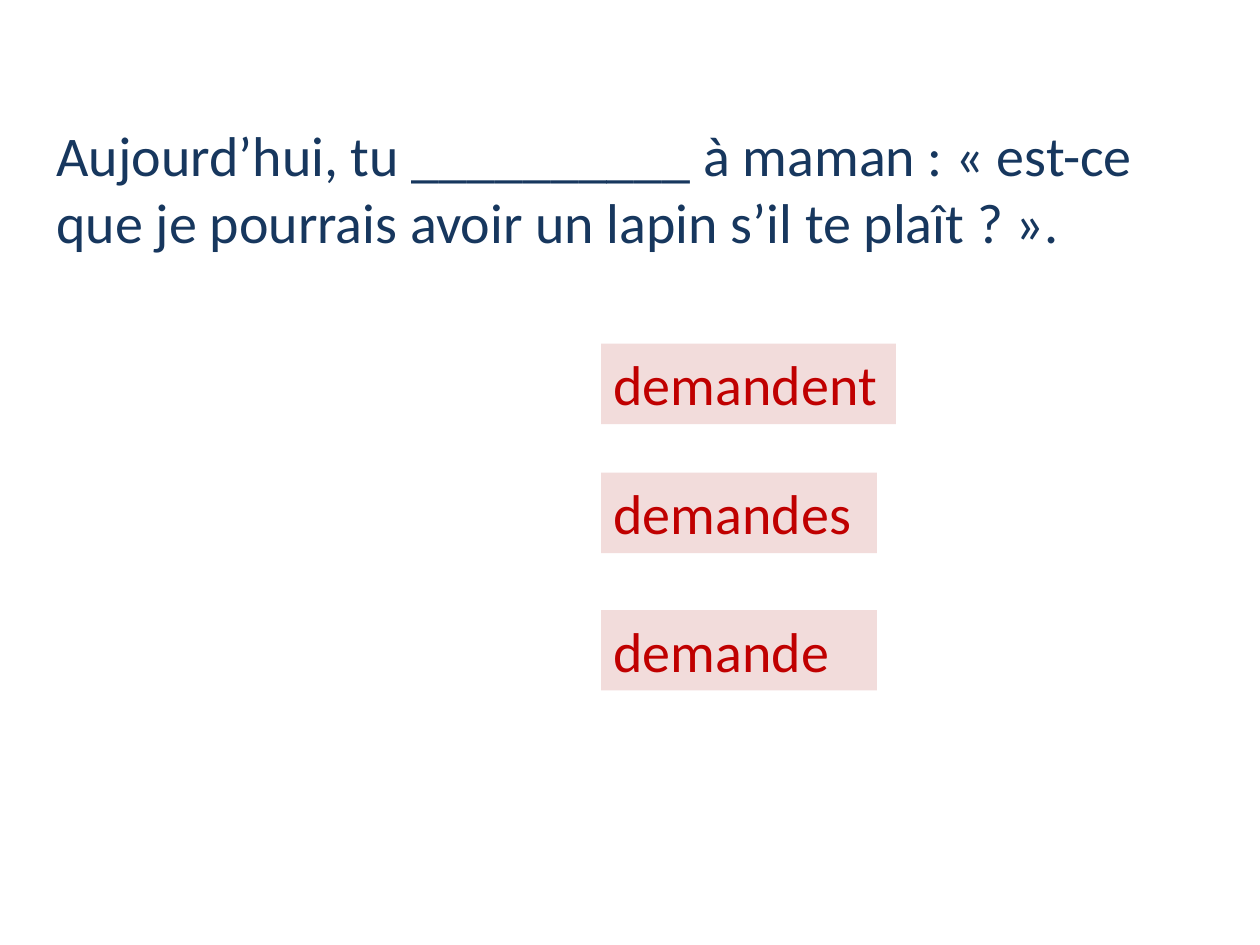
"""Build a French verb exercise slide with a sentence and three answers."""
from pptx import Presentation
from pptx import util as u
from pptx.dml.color import RGBColor
from pptx.enum import text


def color(value):
    return RGBColor.from_string(value)


def add_text(s, words, left, top, width, height, ink):
    sp = s.shapes.add_textbox(u.Cm(left), u.Cm(top), u.Cm(width), u.Cm(height))
    tf = sp.text_frame
    tf.word_wrap = True
    tf.text = words
    r = tf.paragraphs[0].runs[0]
    r.font.name = "Calibri"
    r.font.size = u.Pt(32)
    r.font.color.rgb = color(ink)
    return sp


prs = Presentation()
prs.slide_width = u.Cm(25.4)
prs.slide_height = u.Cm(19.05)
s = prs.slides.add_slide(prs.slide_layouts[6])

sentence = "Aujourd’hui, tu __________ à maman : « est-ce que je pourrais avoir un lapin s’il te plaît ? »."
sp = add_text(s, sentence, 0.89, 1.73, 23.62, 4.09, "17375E")
sp.text_frame.vertical_anchor = text.MSO_ANCHOR.MIDDLE

answers = [("demandent", 6.93, 5.94), ("demandes", 9.53, 5.56), ("demande", 12.3, 5.56)]
for word, top, width in answers:
    sp = add_text(s, word, 12.12, top, width, 1.62, "C00000")
    sp.text_frame.auto_size = text.MSO_AUTO_SIZE.SHAPE_TO_FIT_TEXT
    sp.fill.solid()
    sp.fill.fore_color.rgb = color("F2DCDB")

prs.save("out.pptx")
